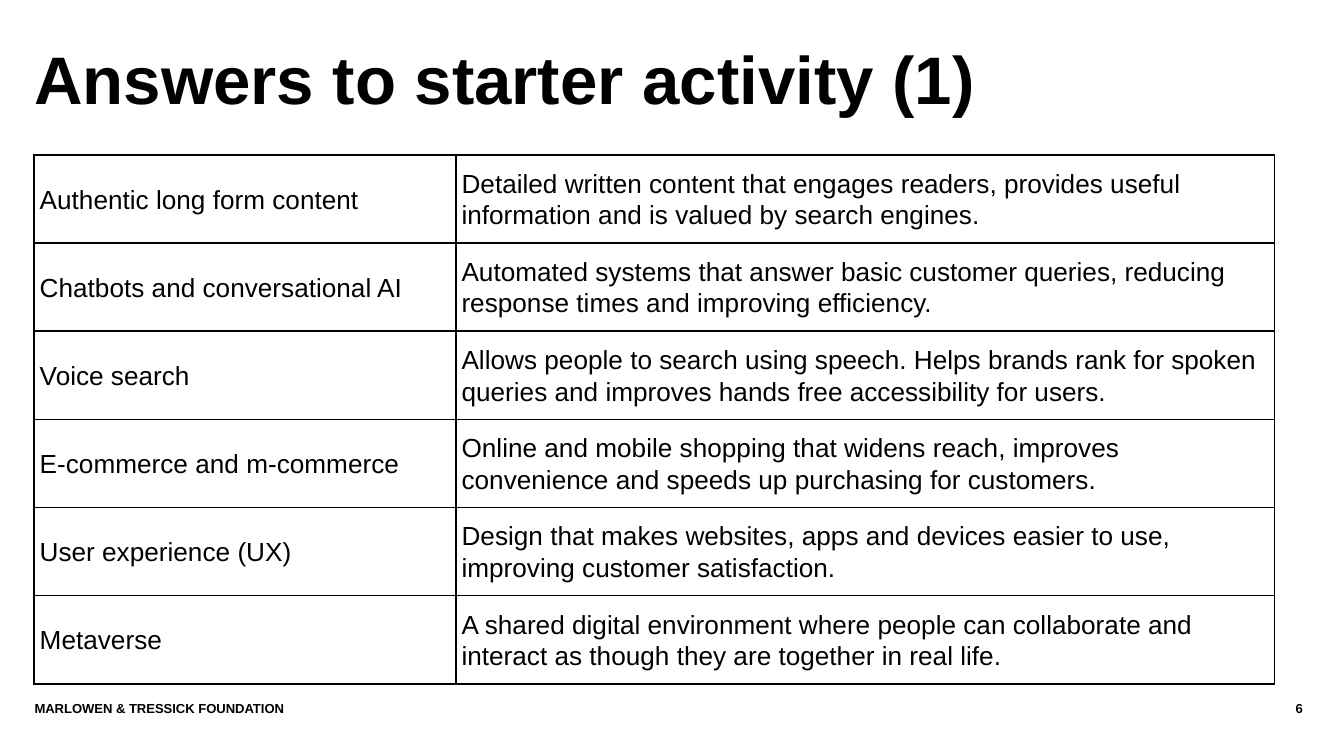
from dataclasses import dataclass
from typing import NamedTuple

from lxml import etree
from pptx import Presentation
from pptx.dml.color import RGBColor
from pptx.enum.text import MSO_ANCHOR, PP_ALIGN
from pptx.oxml.ns import qn
from pptx.util import Pt

LEFT, RIGHT = PP_ALIGN.LEFT, PP_ALIGN.RIGHT
TOP, MIDDLE = MSO_ANCHOR.TOP, MSO_ANCHOR.MIDDLE
BLANK_LAYOUT = 6


@dataclass(frozen=True)
class Theme:
    font: str = "Arial"
    ink: str = "000000"
    title_size: float = 36
    body_size: float = 14
    footer_size: float = 7
    border: float = 1


class Label(NamedTuple):
    text: str
    left: float
    top: float
    width: float
    height: float
    size: float
    align: PP_ALIGN = LEFT
    anchor: MSO_ANCHOR = TOP
    line_spacing: float = 1.0


class Answer(NamedTuple):
    term: str
    meaning: str


THEME = Theme()

LABELS = [
    Label("Answers to starter activity (1)", 18.3, 17, 664.5, 54.7,
          THEME.title_size, anchor=MIDDLE, line_spacing=0.9),
    Label("MARLOWEN & TRESSICK FOUNDATION", 18.5, 375.3, 605.5, 21.6, THEME.footer_size),
    Label("6", 626.6, 375.3, 71.4, 21.6, THEME.footer_size, align=RIGHT),
]

ANSWERS = [
    Answer("Authentic long form content",
           "Detailed written content that engages readers, provides useful "
           "information and is valued by search engines."),
    Answer("Chatbots and conversational AI",
           "Automated systems that answer basic customer queries, reducing "
           "response times and improving efficiency."),
    Answer("Voice search",
           "Allows people to search using speech. Helps brands rank for spoken "
           "queries and improves hands free accessibility for users."),
    Answer("E-commerce and m-commerce",
           "Online and mobile shopping that widens reach, improves "
           "convenience and speeds up purchasing for customers."),
    Answer("User experience (UX)",
           "Design that makes websites, apps and devices easier to use, "
           "improving customer satisfaction."),
    Answer("Metaverse",
           "A shared digital environment where people can collaborate and "
           "interact as though they are together in real life."),
]

TABLE_LEFT, TABLE_TOP = 18.3, 83
COLUMN_WIDTHS = (226, 438.5)
ROW_HEIGHT = 47.25
CELL_FORMAT = {
    "margin_left": Pt(3), "margin_right": Pt(3),
    "margin_top": 0, "margin_bottom": 0,
    "vertical_anchor": MIDDLE,
}
CELL_PARAGRAPH = {"line_spacing": 1.07, "space_after": Pt(8)}


def apply_format(target, values: dict) -> None:
    for attribute, value in values.items():
        setattr(target, attribute, value)


def write(paragraph, text: str, size: float, bold: bool) -> None:
    run = paragraph.add_run()
    run.text = text
    apply_format(run.font, {"name": THEME.font, "size": Pt(size), "bold": bold})
    run.font.color.rgb = RGBColor.from_string(THEME.ink)


def draw_label(slide, label: Label) -> None:
    box = slide.shapes.add_textbox(
        Pt(label.left), Pt(label.top), Pt(label.width), Pt(label.height))
    frame = box.text_frame
    apply_format(frame, {
        "word_wrap": True, "vertical_anchor": label.anchor,
        "margin_left": 0, "margin_right": 0, "margin_top": 0, "margin_bottom": 0,
    })
    paragraph = frame.paragraphs[0]
    apply_format(paragraph, {"alignment": label.align, "line_spacing": label.line_spacing})
    write(paragraph, label.text, label.size, bold=True)


def draw_borders(cell) -> None:
    properties = cell._tc.get_or_add_tcPr()
    for side in ("a:lnL", "a:lnR", "a:lnT", "a:lnB"):
        line = etree.SubElement(properties, qn(side), w=str(Pt(THEME.border)))
        fill = etree.SubElement(line, qn("a:solidFill"))
        etree.SubElement(fill, qn("a:srgbClr"), val=THEME.ink)


def fill_cell(cell, text: str) -> None:
    apply_format(cell, CELL_FORMAT)
    draw_borders(cell)
    cell.fill.background()
    paragraph = cell.text_frame.paragraphs[0]
    apply_format(paragraph, CELL_PARAGRAPH)
    write(paragraph, text, THEME.body_size, bold=False)


def draw_answers(slide, answers: list[Answer]) -> None:
    table = slide.shapes.add_table(
        len(answers), len(COLUMN_WIDTHS), Pt(TABLE_LEFT), Pt(TABLE_TOP),
        Pt(sum(COLUMN_WIDTHS)), Pt(ROW_HEIGHT * len(answers))).table
    apply_format(table, {"first_row": False, "horz_banding": False})
    for column, width in zip(table.columns, COLUMN_WIDTHS):
        column.width = Pt(width)
    for row, answer in zip(table.rows, answers):
        row.height = Pt(ROW_HEIGHT)
        for cell, text in zip(row.cells, answer):
            fill_cell(cell, text)


def main() -> None:
    presentation = Presentation()
    apply_format(presentation, {"slide_width": Pt(720), "slide_height": Pt(405)})
    slide = presentation.slides.add_slide(presentation.slide_layouts[BLANK_LAYOUT])
    for label in LABELS:
        draw_label(slide, label)
    draw_answers(slide, ANSWERS)
    presentation.save("out.pptx")


if __name__ == "__main__":
    main()
